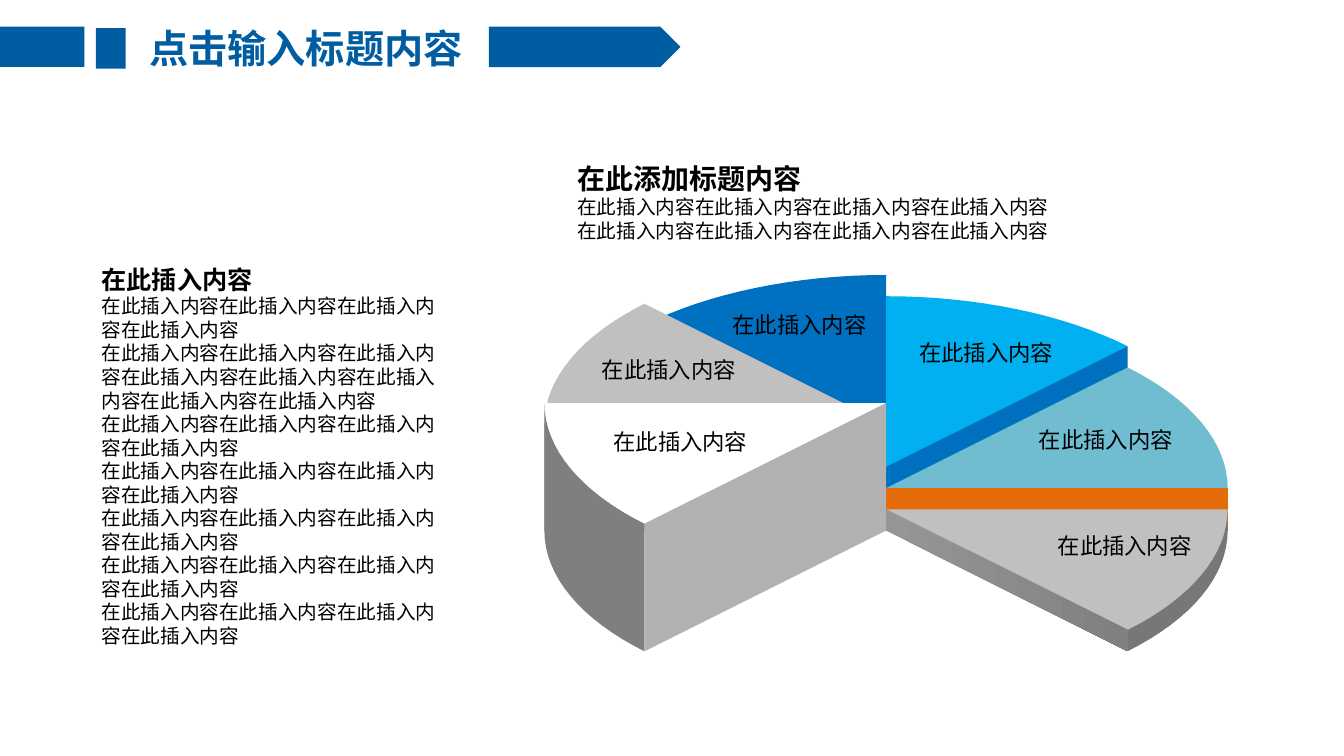
from dataclasses import dataclass
from math import cos, radians, sin

from lxml import etree
from pptx import Presentation
from pptx.dml.color import RGBColor
from pptx.enum.shapes import MSO_SHAPE
from pptx.enum.text import PP_ALIGN
from pptx.oxml.ns import qn
from pptx.util import Cm, Pt

RECTANGLE, PENTAGON = MSO_SHAPE.RECTANGLE, MSO_SHAPE.PENTAGON
LEFT, CENTER = PP_ALIGN.LEFT, PP_ALIGN.CENTER


@dataclass(frozen=True)
class Theme:
    font: str = "Noto Sans CJK SC"
    ink: str = "000000"
    brand: str = "005DA2"
    blue: str = "0070C0"
    sky: str = "00B0F0"
    teal: str = "70BDD2"
    orange: str = "E36C09"
    white: str = "FFFFFF"
    pale: str = "DDDDDD"
    silver: str = "C0C0C0"
    gray: str = "B2B2B2"
    dark_gray: str = "7F7F7F"
    deep_gray: str = "777777"
    gradient: tuple = ("969696", "808080")
    title: int = 28
    heading: int = 20
    side_heading: int = 18
    label: int = 16
    body: int = 14


theme = Theme()
presentation = Presentation()
presentation.slide_width, presentation.slide_height = Cm(33.87), Cm(19.05)
slide = presentation.slides.add_slide(presentation.slide_layouts[6])


def paint(shape, color):
    """Fill a shape with one colour, or with a gradient for a pair of colours."""
    shape.shadow.inherit = False
    shape.line.fill.background()
    if isinstance(color, tuple):
        shape.fill.gradient()
        shape.fill.gradient_angle = 0
        for stop, stop_color in zip(shape.fill.gradient_stops, color):
            stop.color.rgb = RGBColor.from_string(stop_color)
    else:
        shape.fill.solid()
        shape.fill.fore_color.rgb = RGBColor.from_string(color)


def add_text(left, top, width, height, lines, align=LEFT):
    """Add a text box; each line is (text, size, bold, colour)."""
    frame = slide.shapes.add_textbox(Cm(left), Cm(top), Cm(width), Cm(height)).text_frame
    frame.word_wrap = True
    for index, (text, size, bold, color) in enumerate(lines):
        paragraph = frame.add_paragraph() if index else frame.paragraphs[0]
        paragraph.text = text
        paragraph.alignment = align
        font = paragraph.font
        font.name, font.size, font.bold = theme.font, Pt(size), bold
        font.color.rgb = RGBColor.from_string(color)
        defaults = paragraph._p.pPr.find(qn("a:defRPr"))
        etree.SubElement(defaults, qn("a:ea"), typeface=theme.font)


# Stepped pie: every slice is an eighth of an ellipse raised above one base
CENTER_X, BASE_Y = 22.33, 13.37
RADIUS_X, RADIUS_Y = 8.61, 4.3
STEP = 3.21 / 6
SLICE_ANGLE, ARC_POINTS = 45, 16

# steps above base, start angle, angle of the cut wall, top, wall, outer rim
slices = [
    (4, 90, 135, theme.blue, theme.pale, None),
    (3, 45, 45, theme.sky, theme.blue, None),
    (5, 135, 180, theme.silver, theme.gradient, None),
    (2, 0, 0, theme.teal, theme.orange, None),
    (6, 180, 225, theme.white, theme.gray, theme.dark_gray),
    (1, 315, 315, theme.silver, theme.gradient, theme.deep_gray),
]
for steps, start, wall_angle, top_color, wall_color, rim_color in slices:
    rise = steps * STEP
    angles = [radians(start + SLICE_ANGLE * i / ARC_POINTS) for i in range(ARC_POINTS + 1)]
    lower_arc = [(CENTER_X + RADIUS_X * cos(a), BASE_Y - RADIUS_Y * sin(a)) for a in angles]
    upper_arc = [(x, y - rise) for x, y in lower_arc]
    edge = 0 if wall_angle == start else -1
    base_center, top_center = (CENTER_X, BASE_Y), (CENTER_X, BASE_Y - rise)
    faces = [([top_center] + upper_arc, top_color)]
    if rim_color:
        faces.append((upper_arc + lower_arc[::-1], rim_color))
    faces.append(([top_center, upper_arc[edge], lower_arc[edge], base_center], wall_color))
    for outline, color in faces:
        points = [(Cm(x), Cm(y)) for x, y in outline]
        builder = slide.shapes.build_freeform(*points[0], scale=1.0)
        builder.add_line_segments(points[1:], close=True)
        paint(builder.convert_to_shape(), color)

phrase = "在此插入内容"
slice_labels = [
    (26.21, 13.28, 4.27, CENTER),
    (25.93, 10.62, 3.99, LEFT),
    (15.21, 10.67, 4.34, LEFT),
    (18.21, 7.72, 4.01, LEFT),
    (14.6, 8.86, 4.52, CENTER),
    (22.81, 8.41, 4.09, CENTER),
]
for left, top, width, align in slice_labels:
    add_text(left, top, width, 0.94, [(phrase, theme.label, False, theme.ink)], align)

body_line = (phrase * 4, theme.body, False, theme.ink)
long_line = (phrase * 8, theme.body, False, theme.ink)
add_text(14.3, 3.94, 12.45, 2.31,
         [("在此添加标题内容", theme.heading, True, theme.ink)] + [body_line] * 2)
add_text(2.31, 6.53, 9.38, 10.59,
         [(phrase, theme.side_heading, True, theme.ink), body_line, long_line] + [body_line] * 5)

add_text(3.15, 0.48, 9.12, 1.45,
         [("点击输入标题内容", theme.title, True, theme.brand)], CENTER)
header_bars = [
    (PENTAGON, 12.32, 0.67, 4.83),
    (RECTANGLE, 0, 0.67, 2.13),
    (RECTANGLE, 2.42, 0.71, 0.75),
]
for kind, left, top, width in header_bars:
    paint(slide.shapes.add_shape(kind, Cm(left), Cm(top), Cm(width), Cm(1.02)), theme.brand)

presentation.save("out.pptx")
